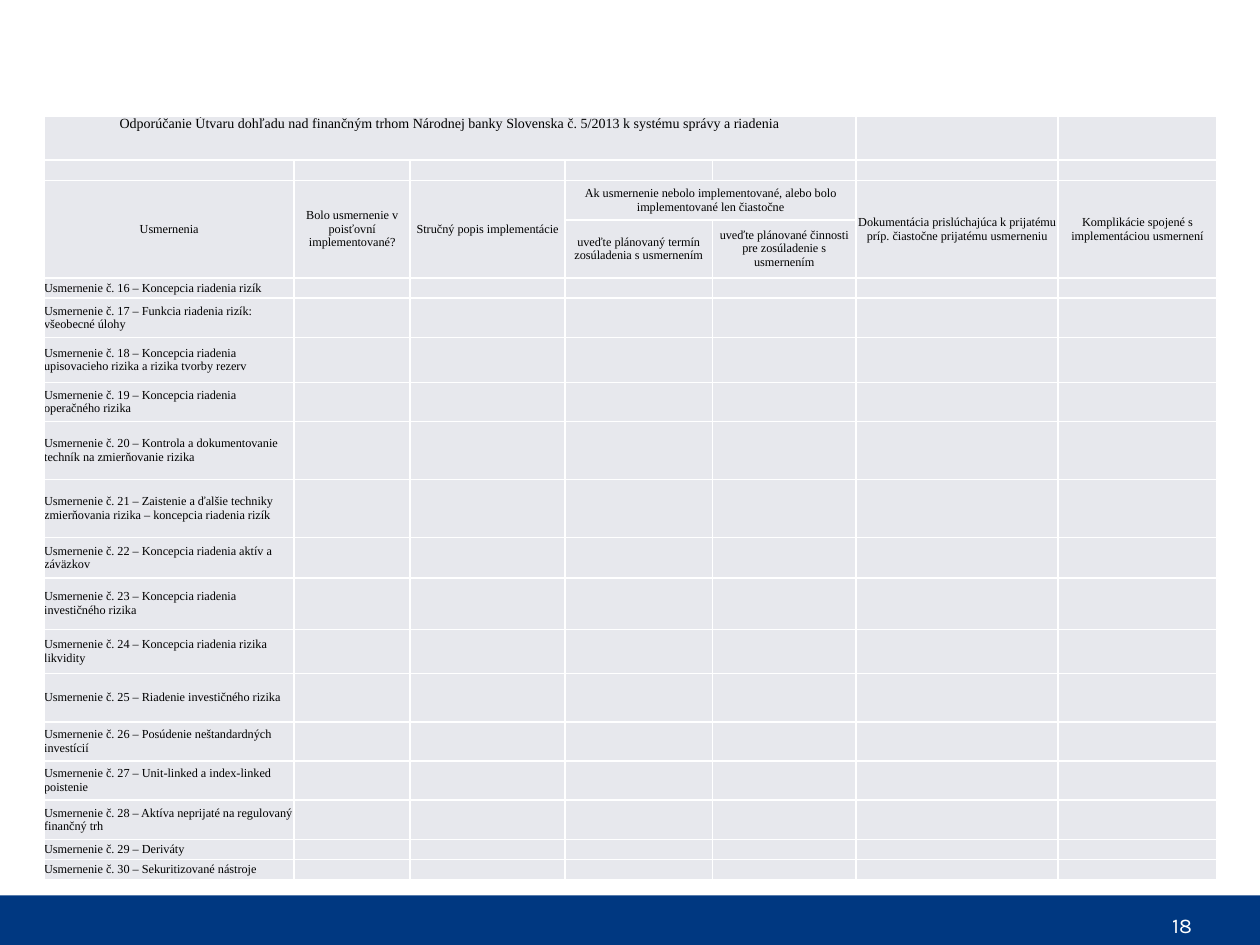
from lxml.etree import SubElement
from pptx import Presentation
from pptx.dml.color import RGBColor
from pptx.enum.shapes import MSO_SHAPE as Shape
from pptx.enum.text import MSO_ANCHOR as Anchor, PP_ALIGN as Align
from pptx.oxml.ns import qn
from pptx.util import Cm, Pt

COLORS = {"band": "003881", "cell": "E7E8ED", "line": "FFFFFF",
          "ink": "000000", "number": "FFFFFF"}
SERIF = "Times New Roman"
COLUMNS = [5.04, 2.34, 3.12, 2.97, 2.9, 4.07, 3.2]
HEAD_ROWS = [0.89, 0.41, 0.79, 1.17]
TITLE = ("Odporúčanie Útvaru dohľadu nad finančným trhom Národnej banky "
         "Slovenska č. 5/2013 k systému správy a riadenia")
HEADINGS = [
    (2, 0, 3, 0, "Usmernenia"),
    (2, 1, 3, 1, "Bolo usmernenie v poisťovní implementované?"),
    (2, 2, 3, 2, "Stručný popis implementácie"),
    (2, 3, 2, 4, "Ak usmernenie nebolo implementované, alebo bolo "
                 "implementované len čiastočne"),
    (3, 3, 3, 3, "uveďte plánovaný termín zosúladenia s usmernením"),
    (3, 4, 3, 4, "uveďte plánované činnosti pre zosúladenie s usmernením"),
    (2, 5, 3, 5, "Dokumentácia prislúchajúca k prijatému príp. čiastočne "
                 "prijatému usmerneniu"),
    (2, 6, 3, 6, "Komplikácie spojené s implementáciou usmernení"),
]
FIRST_GUIDELINE = 16
GUIDELINES = [
    ("Koncepcia riadenia rizík", 0.41),
    ("Funkcia riadenia rizík: všeobecné úlohy", 0.79),
    ("Koncepcia riadenia upisovacieho rizika a rizika tvorby rezerv", 0.91),
    ("Koncepcia riadenia operačného rizika", 0.79),
    ("Kontrola a dokumentovanie techník na zmierňovanie rizika", 1.17),
    ("Zaistenie a ďalšie techniky zmierňovania rizika – koncepcia riadenia rizík", 1.17),
    ("Koncepcia riadenia aktív a záväzkov", 0.81),
    ("Koncepcia riadenia investičného rizika", 1.04),
    ("Koncepcia riadenia rizika likvidity", 0.89),
    ("Riadenie investičného rizika", 0.97),
    ("Posúdenie neštandardných investícií", 0.79),
    ("Unit-linked a index-linked poistenie", 0.79),
    ("Aktíva neprijaté na regulovaný finančný trh", 0.79),
    ("Deriváty", 0.41),
    ("Sekuritizované nástroje", 0.41),
]


def color(name):
    """Return the named palette colour."""
    return RGBColor.from_string(COLORS[name])


def apply(target, values):
    """Set each attribute in values on target."""
    for name, value in values.items():
        setattr(target, name, value)


def write(para, text, ink, align, **font):
    """Write one formatted span into a paragraph."""
    para.alignment = align
    span = para.add_run()
    span.text = text
    apply(span.font, font)
    span.font.color.rgb = color(ink)


def style_cell(cell):
    """Give a cell its fill, borders, zero margins and small empty line."""
    apply(cell, dict.fromkeys(
        ("margin_left", "margin_top", "margin_right", "margin_bottom"), 0))
    props = cell._tc.get_or_add_tcPr()
    for side in ("lnL", "lnR", "lnT", "lnB"):
        line = SubElement(props, qn(f"a:{side}"), w=str(Pt(1)))
        fill = SubElement(line, qn("a:solidFill"))
        SubElement(fill, qn("a:srgbClr"), val=COLORS["line"])
    cell.fill.solid()
    cell.fill.fore_color.rgb = color("cell")
    SubElement(cell.text_frame.paragraphs[0]._p, qn("a:endParaRPr"), sz="700")


def fill_cell(cell, text, align=Align.CENTER, anchor=Anchor.MIDDLE, size=7):
    """Put serif text into a table cell."""
    cell.vertical_anchor = anchor
    write(cell.text_frame.paragraphs[0], text, "ink", align,
          name=SERIF, size=Pt(size), bold=False)


def add_guideline_table(page, left, top):
    """Build the guideline table with its top left corner at the given point."""
    heights = HEAD_ROWS + [height for _, height in GUIDELINES]
    frame = page.shapes.add_table(len(heights), len(COLUMNS), Cm(left), Cm(top),
                                  Cm(sum(COLUMNS)), Cm(sum(heights)))
    table = frame.table
    apply(table, {"first_row": False, "horz_banding": False})
    for column, width in zip(table.columns, COLUMNS):
        column.width = Cm(width)
    for row, height in zip(table.rows, heights):
        row.height = Cm(height)
    for cell in table.iter_cells():
        style_cell(cell)

    table.cell(0, 0).merge(table.cell(0, 4))
    fill_cell(table.cell(0, 0), TITLE, anchor=Anchor.TOP, size=8)
    for row, column, last_row, last_column, text in HEADINGS:
        cell = table.cell(row, column)
        if (row, column) != (last_row, last_column):
            cell.merge(table.cell(last_row, last_column))
        fill_cell(cell, text)
    for index, (text, _) in enumerate(GUIDELINES):
        fill_cell(table.cell(len(HEAD_ROWS) + index, 0),
                  f"Usmernenie č. {FIRST_GUIDELINE + index} – {text}", Align.LEFT)


def add_footer(page, left, top, width, height):
    """Draw the footer band with the page number at its right."""
    band = page.shapes.add_shape(Shape.RECTANGLE, Cm(left), Cm(top),
                                 Cm(width), Cm(height))
    band.shadow.inherit = False
    band.fill.solid()
    band.fill.fore_color.rgb = color("band")
    band.line.fill.background()
    box = page.shapes.add_textbox(Cm(left + width - 3.5), Cm(top + 0.2),
                                  Cm(2.38), Cm(height - 0.2))
    apply(box.text_frame, {"word_wrap": True, "vertical_anchor": Anchor.MIDDLE})
    write(box.text_frame.paragraphs[0], "18", "number", Align.RIGHT,
          name="Karla", size=Pt(12))


def main():
    """Build and save the slide."""
    deck = Presentation()
    apply(deck, {"slide_width": Cm(25.4), "slide_height": Cm(19.05)})
    page = deck.slides.add_slide(deck.slide_layouts[6])
    add_footer(page, 0, 18.05, 25.4, 1)
    add_guideline_table(page, 0.89, 2.34)
    deck.save("out.pptx")


if __name__ == "__main__":
    main()
